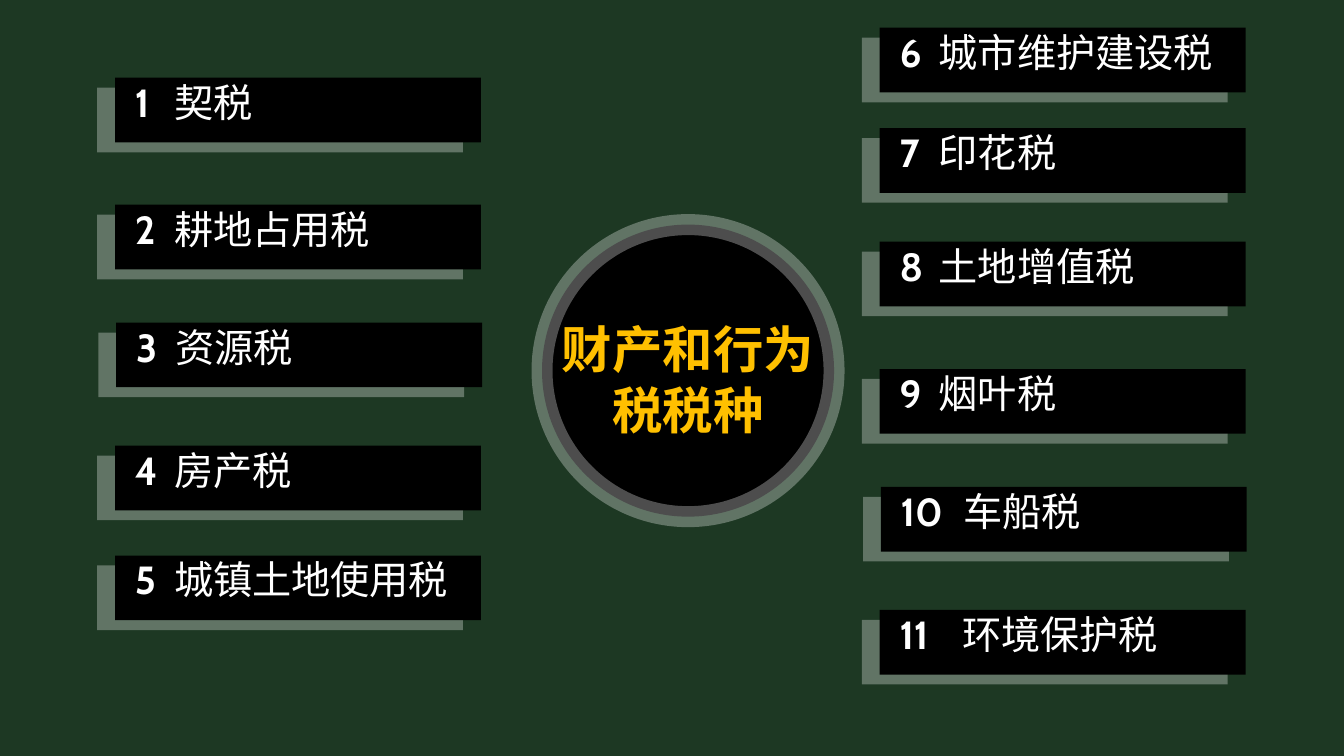
"""Build a slide listing eleven property and behaviour taxes around a central title."""
import pptx
import pptx.dml.color
import pptx.enum.lang
import pptx.enum.shapes
import pptx.enum.text
import pptx.oxml
import pptx.oxml.ns
import pptx.util

Cm = pptx.util.Cm
Pt = pptx.util.Pt

BACKGROUND = "1D3823"
BLACK = "000000"
WHITE = "FFFFFF"
GOLD = "FFC000"
BAR_WIDTH, BAR_HEIGHT = 9.22, 1.63
NUMBER_WIDTH, NAME_WIDTH, TEXT_HEIGHT = 2.03, 7.9, 1.45

TEXT_FORMAT = {
    "name": "Cabin",
    "size": Pt(28),
    "bold": False,
    "language_id": pptx.enum.lang.MSO_LANGUAGE_ID.SIMPLIFIED_CHINESE,
}
FRAME_FORMAT = {
    "word_wrap": True,
    "auto_size": pptx.enum.text.MSO_AUTO_SIZE.NONE,
    "vertical_anchor": pptx.enum.text.MSO_ANCHOR.TOP,
}

TAXES = [
    (2.9, 1.96, "契税"),
    (2.9, 5.16, "耕地占用税"),
    (2.93, 8.13, "资源税"),
    (2.9, 11.23, "房产税"),
    (2.9, 14, "城镇土地使用税"),
    (22.17, 0.7, "城市维护建设税"),
    (22.17, 3.23, "印花税"),
    (22.17, 6.09, "土地增值税"),
    (22.17, 9.3, "烟叶税"),
    (22.2, 12.27, "车船税"),
    (22.17, 15.37, "环境保护税"),
]


def set_color(fill, color, opacity=100):
    fill.solid()
    fill.fore_color.rgb = pptx.dml.color.RGBColor.from_string(color)
    if opacity < 100:
        color_element = fill._xPr.find(".//" + pptx.oxml.ns.qn("a:srgbClr"))
        alpha = pptx.oxml.parse_xml(
            f'<a:alpha {pptx.oxml.ns.nsdecls("a")} val="{opacity * 1000}"/>')
        color_element.append(alpha)


def set_attributes(target, values):
    for name, value in values.items():
        setattr(target, name, value)


def add_block(slide, kind, left, top, width, height, color, opacity=100):
    shape = slide.shapes.add_shape(kind, Cm(left), Cm(top), Cm(width), Cm(height))
    shape.shadow.inherit = False
    set_color(shape.fill, color, opacity)
    shape.line.fill.background()
    return shape


def write_text(shape, text, color=WHITE, **changes):
    set_attributes(shape.text_frame, FRAME_FORMAT)
    paragraph = shape.text_frame.paragraphs[0]
    run = paragraph.add_run()
    run.text = text
    set_attributes(run.font, TEXT_FORMAT | changes)
    set_color(run.font.fill, color)
    return paragraph


def add_label(slide, left, top, width, text, **changes):
    box = slide.shapes.add_textbox(Cm(left), Cm(top), Cm(width), Cm(TEXT_HEIGHT))
    write_text(box, text, **changes)


def add_tax(slide, number, left, top, name):
    rectangle = pptx.enum.shapes.MSO_SHAPE.RECTANGLE
    add_block(slide, rectangle, left - 0.45, top + 0.25, BAR_WIDTH, BAR_HEIGHT, WHITE, 30)
    add_block(slide, rectangle, left, top, BAR_WIDTH, BAR_HEIGHT, BLACK)
    name_offset = 1.24 if number < 10 else 1.83
    add_label(slide, left + 0.25, top - 0.12, NUMBER_WIDTH, str(number), bold=True)
    add_label(slide, left + name_offset, top - 0.12, NAME_WIDTH, name)


def add_center(slide):
    circle = add_block(
        slide, pptx.enum.shapes.MSO_SHAPE.OVAL, 13.66, 5.66, 7.36, 7.36, BLACK)
    circle.line.width = Pt(15)
    set_color(circle.line.fill, WHITE, 30)
    title = slide.shapes.title
    set_attributes(title, {
        "left": Cm(13.84), "top": Cm(7.9), "width": Cm(6.99), "height": Cm(3.33)})
    paragraph = write_text(title, "财产和行为税税种", GOLD, size=Pt(36), bold=True)
    paragraph.alignment = pptx.enum.text.PP_ALIGN.CENTER
    slide.shapes._spTree.append(title._element)


def main():
    presentation = pptx.Presentation()
    presentation.slide_width = Cm(33.87)
    presentation.slide_height = Cm(19.05)
    slide = presentation.slides.add_slide(presentation.slide_layouts[5])
    set_color(slide.background.fill, BACKGROUND)
    add_center(slide)
    for number, (left, top, name) in enumerate(TAXES, start=1):
        add_tax(slide, number, left, top, name)
    presentation.save("out.pptx")


if __name__ == "__main__":
    main()
